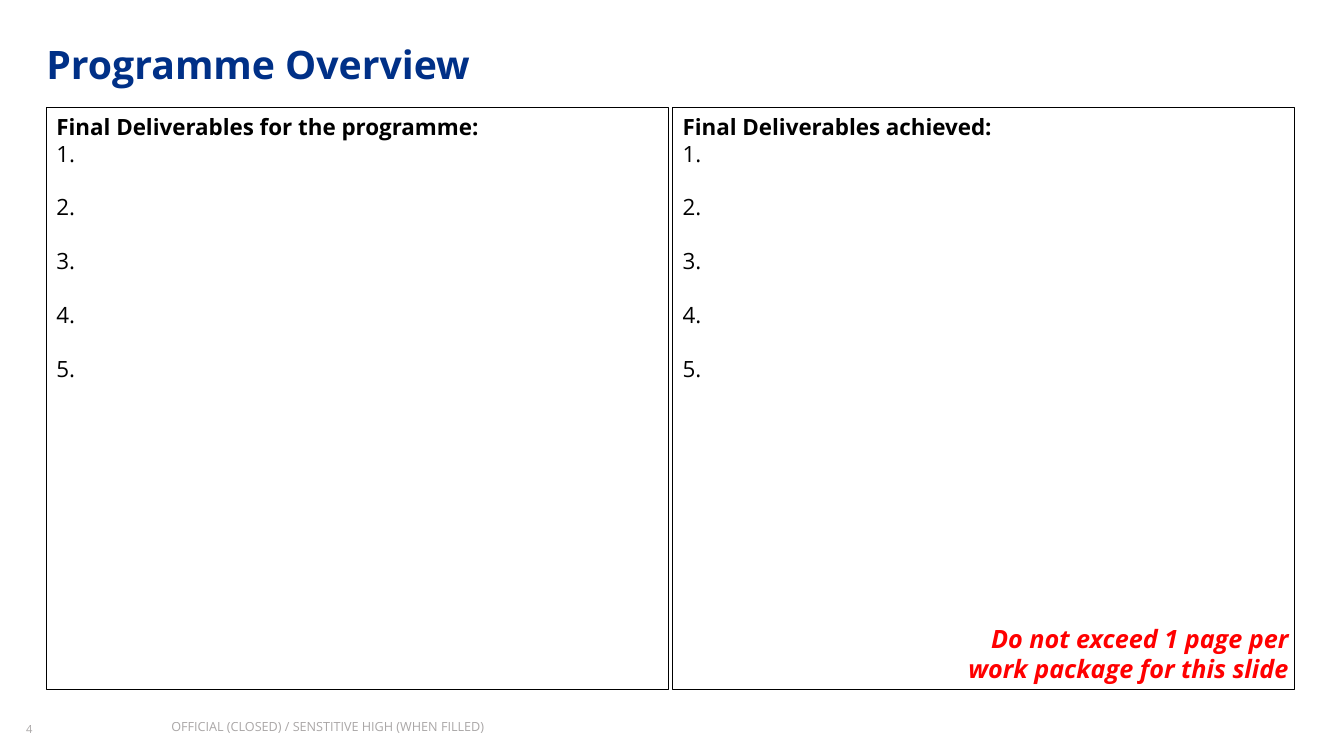
import pptx
import pptx.dml.color
import pptx.enum.text
import pptx.oxml.ns
import pptx.util
from lxml import etree

COLORS = {"title": "003087", "ink": "000000", "warning": "FF0000", "footer": "767171"}
ALIGN = pptx.enum.text.PP_ALIGN
ANCHOR = pptx.enum.text.MSO_ANCHOR
TWO_CONTENT_LAYOUT = 3


class SlideBuilder:
    """Holds the style and the slide; boxes are percentages of the slide's size."""

    font_name = "Open Sans"
    inset = (0.1, 0.05)

    def __init__(self, presentation):
        self.width = presentation.slide_width
        self.height = presentation.slide_height
        self.slide = presentation.slides.add_slide(
            presentation.slide_layouts[TWO_CONTENT_LAYOUT])

    def place(self, box):
        left, top, width, height = box
        return (round(self.width * left / 100), round(self.height * top / 100),
                round(self.width * width / 100), round(self.height * height / 100))

    def set_frame(self, shape, inset, anchor=ANCHOR.TOP):
        frame = shape.text_frame
        frame.word_wrap = True
        frame.auto_size = pptx.enum.text.MSO_AUTO_SIZE.NONE
        frame.vertical_anchor = anchor
        frame.margin_left = frame.margin_right = pptx.util.Inches(inset[0])
        frame.margin_top = frame.margin_bottom = pptx.util.Inches(inset[1])
        return frame

    def style(self, paragraph, size, color, bold=False, italic=False,
              align=ALIGN.LEFT, line_spacing=1.0, space_before=0):
        paragraph.alignment = align
        paragraph.line_spacing = line_spacing
        paragraph.space_before = pptx.util.Pt(space_before)
        font = paragraph.font
        font.name = self.font_name
        font.size = pptx.util.Pt(size)
        font.bold = bold
        font.italic = italic
        font.color.rgb = pptx.dml.color.RGBColor.from_string(COLORS[color])

    def move(self, shape, box):
        shape.left, shape.top, shape.width, shape.height = self.place(box)

    def title(self, text, box):
        shape = self.slide.shapes.title
        self.move(shape, box)
        frame = self.set_frame(shape, (0, 0))
        frame.text = text
        self.style(frame.paragraphs[0], 28, "title", bold=True, line_spacing=1.1)

    def panel(self, index, heading, items, box):
        """Outlined body placeholder with a bold heading and spaced items."""
        shape = self.slide.placeholders[index]
        self.move(shape, box)
        shape.line.color.rgb = pptx.dml.color.RGBColor.from_string(COLORS["ink"])
        shape.line.width = pptx.util.Pt(0.75)
        frame = self.set_frame(shape, self.inset)
        frame.text = "\n".join([heading, *items])
        for number, paragraph in enumerate(frame.paragraphs):
            properties = paragraph._p.get_or_add_pPr()
            properties.set("marL", "0")
            properties.set("indent", "0")
            etree.SubElement(properties, pptx.oxml.ns.qn("a:buNone"))
            self.style(paragraph, 16, "ink", bold=number == 0,
                       space_before=19.2 if number > 1 else 0)

    def text(self, text, box, size, color, inset=(0, 0), anchor=ANCHOR.TOP,
             opacity=None, **style):
        shape = self.slide.shapes.add_textbox(*self.place(box))
        frame = self.set_frame(shape, inset, anchor)
        frame.text = text
        paragraph = frame.paragraphs[0]
        self.style(paragraph, size, color, **style)
        if opacity:
            for rgb in paragraph._p.iter(pptx.oxml.ns.qn("a:srgbClr")):
                etree.SubElement(rgb, pptx.oxml.ns.qn("a:alpha"), val=str(opacity * 1000))


def main():
    presentation = pptx.Presentation()
    presentation.slide_width = pptx.util.Inches(13.33)
    presentation.slide_height = pptx.util.Inches(7.5)
    builder = SlideBuilder(presentation)

    builder.title("Programme Overview", (3.45, 4.67, 89.57, 6.93))

    items = [f"{number}." for number in range(1, 6)]
    headings = ("Final Deliverables for the programme:", "Final Deliverables achieved:")
    panel_left, panel_width, panel_gap = 3.45, 46.29, 0.3
    for column, heading in enumerate(headings):
        left = panel_left + column * (panel_width + panel_gap)
        builder.panel(column + 1, heading, items, (left, 14.27, panel_width, 76.93))

    builder.text("Do not exceed 1 page per work package for this slide",
                 (71.12, 81.73, 25.51, 9.47), 18, "warning", inset=builder.inset,
                 bold=True, italic=True, align=ALIGN.RIGHT)
    builder.text("4", (1.95, 95.07, 5.93, 2.53), 8, "footer",
                 anchor=ANCHOR.MIDDLE, opacity=61, line_spacing=1.1)
    builder.text("OFFICIAL (CLOSED) / SENSTITIVE HIGH (WHEN FILLED)",
                 (12.75, 95.07, 39.98, 2.53), 9, "footer", opacity=61)

    presentation.save("out.pptx")


if __name__ == "__main__":
    main()
